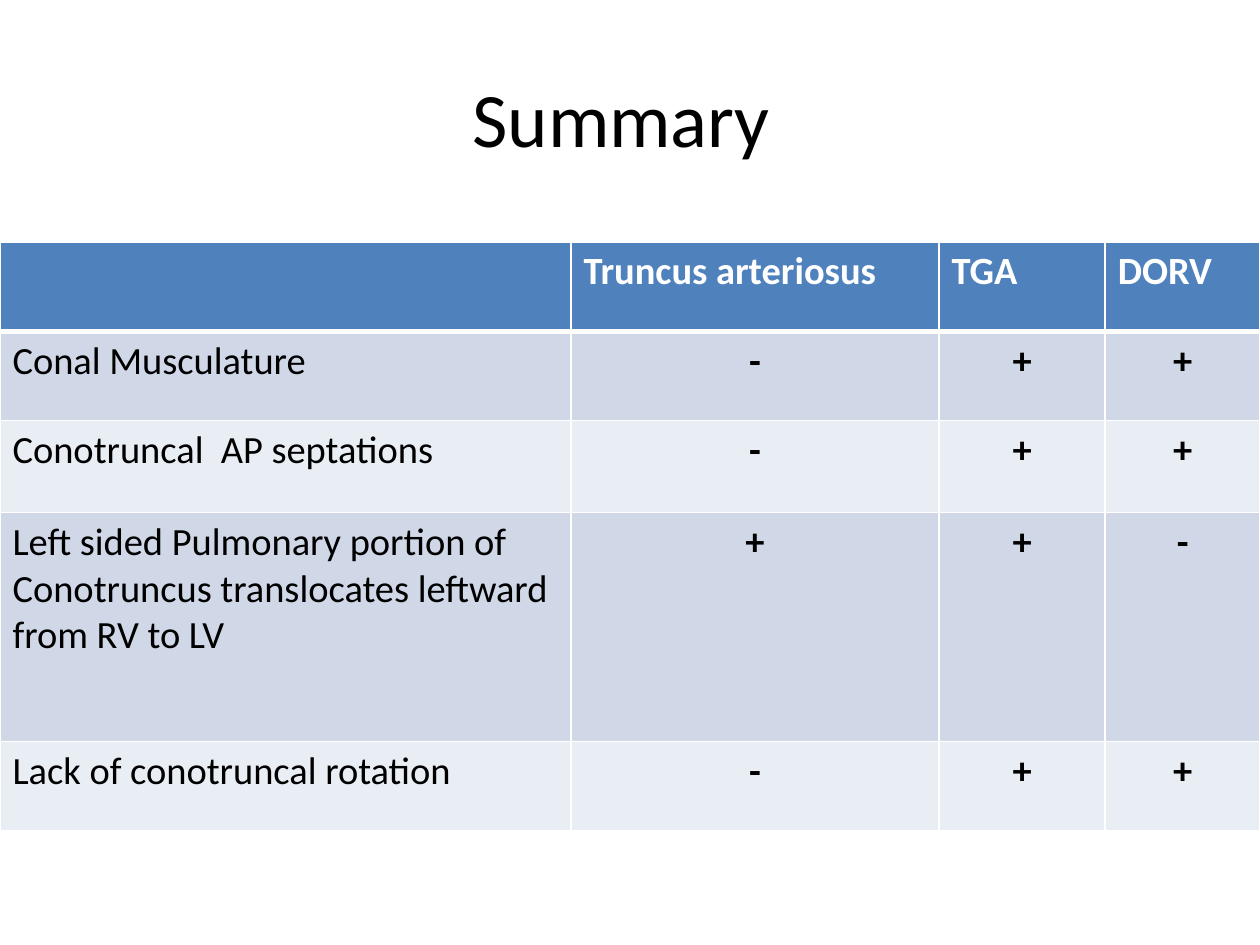
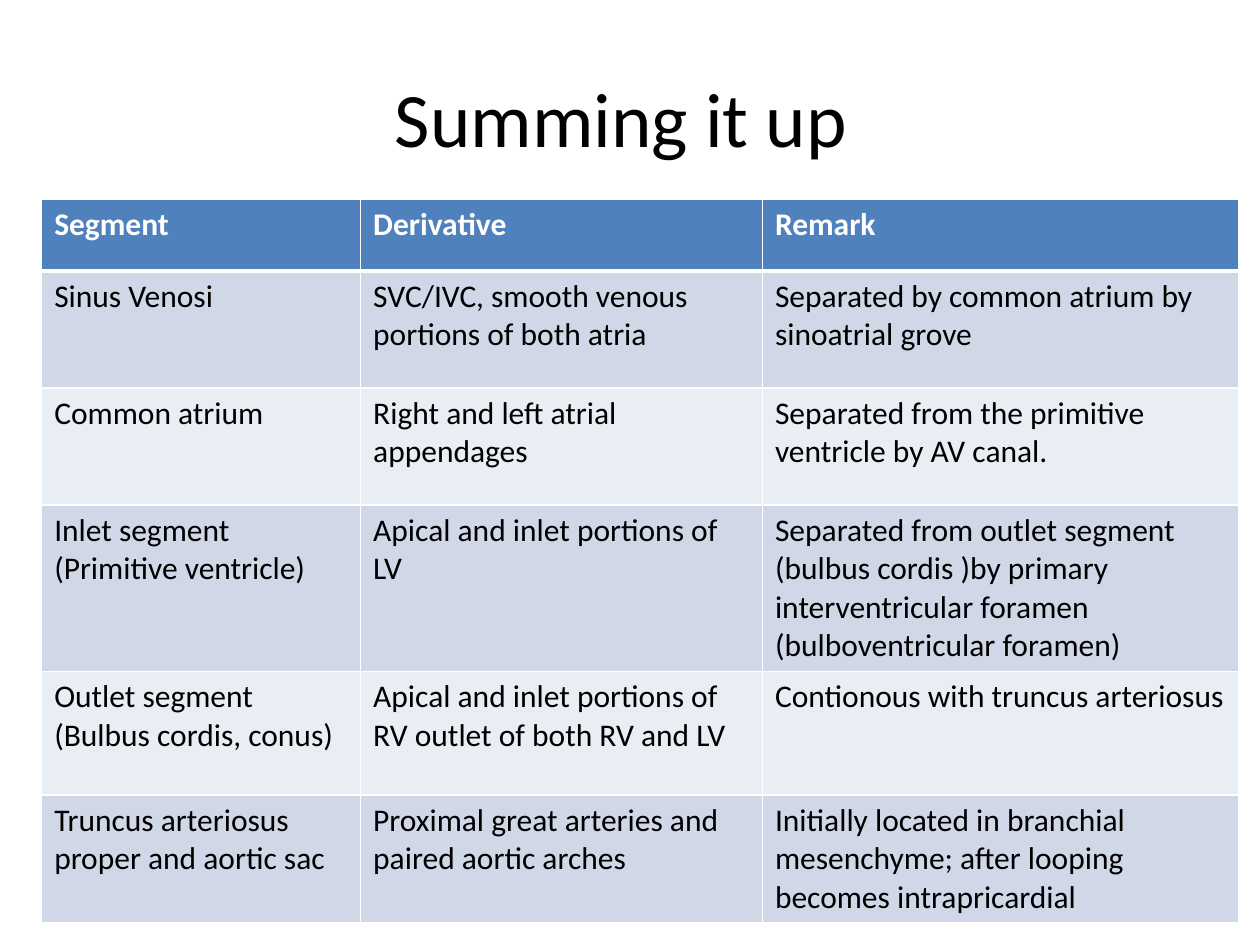
from lxml import etree
from pptx import Presentation
from pptx.dml.color import RGBColor
from pptx.enum.text import MSO_ANCHOR, PP_ALIGN
from pptx.oxml.ns import qn
from pptx.util import Cm, Pt

LEFT, CENTER = PP_ALIGN.LEFT, PP_ALIGN.CENTER
MIDDLE = MSO_ANCHOR.MIDDLE

# Shared style
COLORS = {
    "text": "000000",
    "header": "4F81BD",
    "header_text": "FFFFFF",
    "band_dark": "D0D8E8",
    "band_light": "E9EDF4",
    "border": "FFFFFF",
}
FONT = "Calibri"
TITLE_SIZE = 44
TITLE_BOX = (1.27, 0.76, 22.86, 3.18)
THIN, THICK = 1, 3
TITLE_ONLY_LAYOUT = 5

# Content: one entry per slide, lengths in centimetres
SLIDES = [
    {
        "title": "Summary ",
        "corner": (0, 4.88),
        "columns": [11.51, 7.42, 3.35, 3.12],
        "rows": [1.8, 1.8, 1.85, 4.62, 1.8],
        "size": 22,
        "cells": [
            ("", "Truncus arteriosus", "TGA", "DORV"),
            ("Conal Musculature", "-", "+", "+"),
            ("Conotruncal  AP septations", "-", "+", "+"),
            ("Left sided Pulmonary portion of Conotruncus translocates "
             "leftward from RV to LV", "+", "+", "-"),
            ("Lack of conotruncal rotation", "-", "+", "+"),
        ],
    },
    {
        "title": "Summing it up ",
        "corner": (0.84, 4.01),
        "columns": [6.43, 8.1, 9.6],
        "rows": [1.45, 2.36, 2.36, 3.23, 2.49, 2.49],
        "size": 18,
        "cells": [
            ("Segment", "Derivative", "Remark"),
            ("Sinus Venosi",
             "SVC/IVC, smooth venous portions of both atria",
             "Separated by common atrium by sinoatrial grove"),
            ("Common atrium",
             "Right and left atrial appendages",
             "Separated from the primitive ventricle by AV canal."),
            ("Inlet segment (Primitive ventricle)",
             "Apical and inlet portions of LV",
             "Separated from outlet segment (bulbus cordis )by primary "
             "interventricular foramen (bulboventricular foramen)"),
            ("Outlet segment (Bulbus cordis, conus)",
             "Apical and inlet portions of RV outlet of both RV and LV",
             "Contionous with truncus arteriosus"),
            ("Truncus arteriosus proper and aortic sac",
             "Proximal great arteries and paired aortic arches",
             "Initially located in branchial mesenchyme; after looping "
             "becomes intrapricardial"),
        ],
    },
]


def add_run(paragraph, text, size, color, bold=False):
    run = paragraph.add_run()
    run.text = text
    run.font.name = FONT
    run.font.size = Pt(size)
    run.font.bold = bold
    run.font.color.rgb = RGBColor.from_string(COLORS[color])


def set_borders(cell, top, bottom):
    """Draw the four cell borders; widths are in points."""
    properties = cell._tc.get_or_add_tcPr()
    widths = {"a:lnL": THIN, "a:lnR": THIN, "a:lnT": top, "a:lnB": bottom}
    for tag, width in widths.items():
        line = etree.SubElement(properties, qn(tag), w=str(Pt(width)))
        fill = etree.SubElement(line, qn("a:solidFill"))
        etree.SubElement(fill, qn("a:srgbClr"), val=COLORS["border"])


def add_title(slide, text):
    title = slide.shapes.title
    title.left, title.top, title.width, title.height = map(Cm, TITLE_BOX)
    title.text_frame.vertical_anchor = MIDDLE
    paragraph = title.text_frame.paragraphs[0]
    paragraph.alignment = CENTER
    add_run(paragraph, text, TITLE_SIZE, "text")


def fill_cell(cell, text, row_index, size):
    is_header = row_index == 0
    is_mark = text in ("+", "-")

    # Borders: a thick rule separates the header from the body
    set_borders(cell,
                top=THICK if row_index == 1 else THIN,
                bottom=THICK if is_header else THIN)

    # Header fill, then alternating bands
    band = "band_dark" if row_index % 2 else "band_light"
    cell.fill.solid()
    cell.fill.fore_color.rgb = RGBColor.from_string(
        COLORS["header" if is_header else band])

    if text:
        paragraph = cell.text_frame.paragraphs[0]
        paragraph.alignment = CENTER if is_mark else LEFT
        add_run(paragraph, text, size,
                "header_text" if is_header else "text",
                bold=is_header or is_mark)


def add_table(slide, content):
    columns, rows = content["columns"], content["rows"]
    left, top = content["corner"]
    table = slide.shapes.add_table(
        len(rows), len(columns), Cm(left), Cm(top),
        Cm(sum(columns)), Cm(sum(rows))).table
    for column, width in zip(table.columns, columns):
        column.width = Cm(width)
    for row, height in zip(table.rows, rows):
        row.height = Cm(height)
    for row_index, texts in enumerate(content["cells"]):
        for column_index, text in enumerate(texts):
            fill_cell(table.cell(row_index, column_index), text,
                      row_index, content["size"])


def main():
    presentation = Presentation()
    presentation.slide_width, presentation.slide_height = Cm(25.4), Cm(19.05)
    layout = presentation.slide_layouts[TITLE_ONLY_LAYOUT]
    for content in SLIDES:
        slide = presentation.slides.add_slide(layout)
        add_title(slide, content["title"])
        add_table(slide, content)
    presentation.save("out.pptx")


if __name__ == "__main__":
    main()
